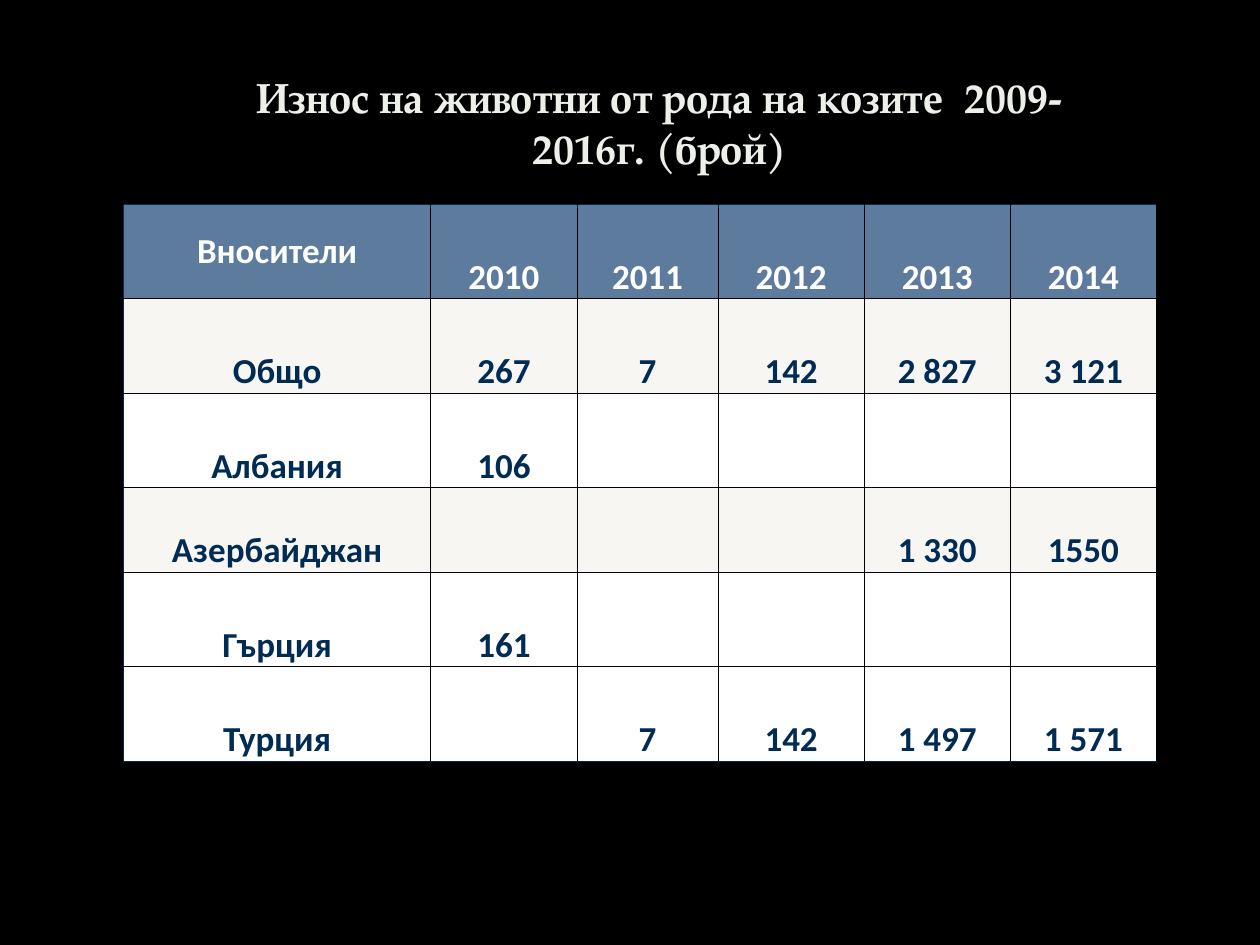
from dataclasses import dataclass
from lxml.etree import SubElement as Sub
from pptx import Presentation as Deck
from pptx.dml.color import RGBColor as Rgb
from pptx.enum.text import MSO_ANCHOR as Anchor, PP_ALIGN as Align
from pptx.oxml.ns import qn
from pptx.util import Inches, Pt


@dataclass(frozen=True)
class Theme:
    back: str = "000000"
    title: str = "EDF0E9"
    head: str = "5D7B9D"
    light: str = "F7F6F3"
    white: str = "FFFFFF"
    navy: str = "002B54"
    grid: str = "000000"
    serif: str = "TeX Gyre Pagella"
    sans: str = "Calibri"
    big: int = 24
    body: int = 20
    rule: float = 0.5


@dataclass(frozen=True)
class Row:
    high: float
    fill: str
    ink: str
    cells: tuple[str, ...]


@dataclass(frozen=True)
class Box:
    left: float
    top: float
    wide: float
    high: float

    def place(self) -> tuple:
        return tuple(Inches(n) for n in (self.left, self.top, self.wide, self.high))


LOOK = Theme()
COLS = (2.44, 1.16, 1.12, 1.16, 1.16, 1.16)
ROWS = (
    Row(0.75, LOOK.head, LOOK.white, ("Вносители", "2010", "2011", "2012", "2013", "2014")),
    Row(0.75, LOOK.light, LOOK.navy, ("Общо", "267", "7", "142", "2 827", "3 121")),
    Row(0.75, LOOK.white, LOOK.navy, ("Албания", "106", "", "", "", "")),
    Row(0.67, LOOK.light, LOOK.navy, ("Азeрбайджан", "", "", "", "1 330", "1550")),
    Row(0.75, LOOK.white, LOOK.navy, ("Гърция", "161", "", "", "", "")),
    Row(0.75, LOOK.white, LOOK.navy, ("Турция", "", "7", "142", "1 497", "1 571")),
)


def apply(item, form: dict) -> None:
    for name, value in form.items():
        setattr(item, name, value)


def write(frame, text: str, face: str, size: int, ink: str) -> None:
    para = frame.paragraphs[0]
    para.alignment = Align.CENTER
    run = para.add_run()
    run.text = text
    apply(run.font, {"name": face, "size": Pt(size), "bold": True})
    run.font.color.rgb = Rgb.from_string(ink)


def edge(cell, inks: dict[str, str]) -> None:
    props = cell._tc.get_or_add_tcPr()
    for spot, (side, ink) in enumerate(inks.items()):
        line = Sub(props, qn(f"a:ln{side}"), w=str(Pt(LOOK.rule)))
        Sub(Sub(line, qn("a:solidFill")), qn("a:srgbClr"), val=ink)
        props.insert(spot, line)


def paint(cell, row: Row, text: str) -> None:
    cell.fill.solid()
    cell.fill.fore_color.rgb = Rgb.from_string(row.fill)
    if text:
        thin = Inches(0.01)
        apply(cell, {
            "margin_left": thin, "margin_top": thin, "margin_right": thin,
            "margin_bottom": 0, "vertical_anchor": Anchor.BOTTOM,
        })
        write(cell.text_frame, text, LOOK.sans, LOOK.body, row.ink)


def draw_table(slide, box: Box) -> None:
    table = slide.shapes.add_table(len(ROWS), len(COLS), *box.place()).table
    table.horz_banding = False
    for col, wide in zip(table.columns, COLS):
        col.width = Inches(wide)
    last = len(ROWS) - 1
    for r, row in enumerate(ROWS):
        table.rows[r].height = Inches(row.high)
        for c, text in enumerate(row.cells):
            cell = table.cell(r, c)
            paint(cell, row, text)
            edge(cell, {
                "L": LOOK.grid if c else LOOK.navy,
                "R": LOOK.grid,
                "T": LOOK.grid if r else LOOK.navy,
                "B": LOOK.navy if r == last else LOOK.grid,
            })
    table.cell(0, 0).vertical_anchor = Anchor.MIDDLE


def draw_title(slide, box: Box, text: str) -> None:
    frame = slide.shapes.add_textbox(*box.place()).text_frame
    frame.word_wrap = True
    write(frame, text, LOOK.serif, LOOK.big, LOOK.title)


def main() -> None:
    deck = Deck()
    apply(deck, {"slide_width": Inches(10), "slide_height": Inches(7.5)})
    slide = deck.slides.add_slide(deck.slide_layouts[6])
    fill = slide.background.fill
    fill.solid()
    fill.fore_color.rgb = Rgb.from_string(LOOK.back)
    high = sum(row.high for row in ROWS)
    draw_table(slide, Box(0.98, 1.62, sum(COLS), high))
    draw_title(slide, Box(1.93, 0.52, 6.61, 0.91),
               "Износ на животни от рода на козите  2009-2016г. (брой)")
    deck.save("out.pptx")


if __name__ == "__main__":
    main()
